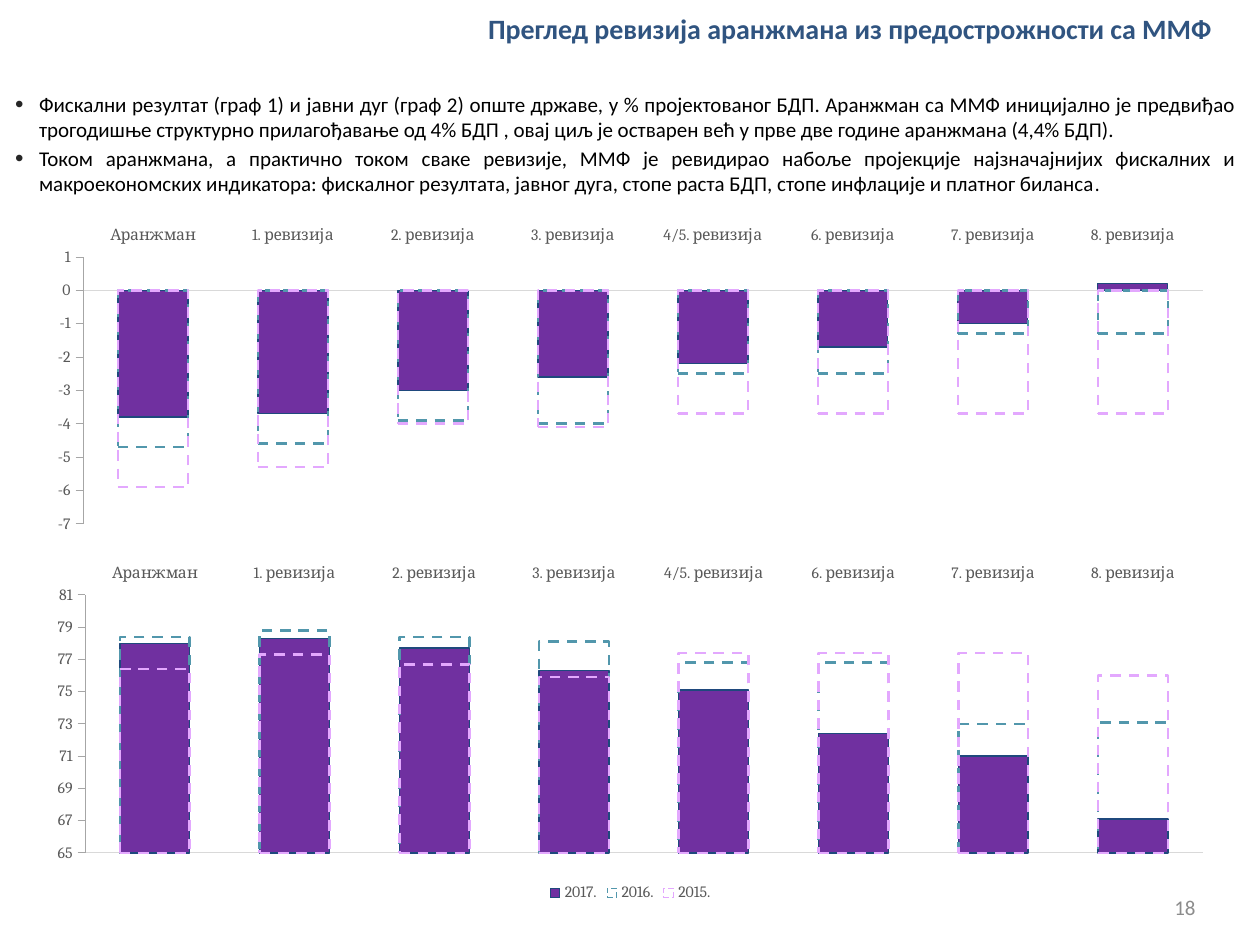
from dataclasses import dataclass

from lxml import etree
from pptx import Presentation
from pptx.chart.data import CategoryChartData
from pptx.dml.color import RGBColor
from pptx.enum.chart import XL_CHART_TYPE, XL_LEGEND_POSITION, XL_TICK_LABEL_POSITION, XL_TICK_MARK
from pptx.enum.dml import MSO_LINE
from pptx.enum.text import MSO_ANCHOR, PP_ALIGN
from pptx.oxml.ns import qn
from pptx.util import Emu, Pt

CLUSTERED = XL_CHART_TYPE.COLUMN_CLUSTERED
LEGEND_BOTTOM = XL_LEGEND_POSITION.BOTTOM
LABELS_HIGH = XL_TICK_LABEL_POSITION.HIGH
TICK_NONE, TICK_OUT = XL_TICK_MARK.NONE, XL_TICK_MARK.OUTSIDE
DASH = MSO_LINE.DASH
CENTER, RIGHT, JUSTIFY = PP_ALIGN.CENTER, PP_ALIGN.RIGHT, PP_ALIGN.JUSTIFY
TOP, MIDDLE = MSO_ANCHOR.TOP, MSO_ANCHOR.MIDDLE
EMU_PER_PX = 914400 / 126


@dataclass(frozen=True)
class Theme:
    body_font: str = "Calibri"
    chart_font: str = "Cambria"
    title_size: float = 16
    body_size: float = 12
    axis_size: float = 9
    title: str = "305480"
    body: str = "000000"
    bullet: str = "262626"
    page: str = "8C8C8C"
    axis_text: str = "595959"
    category_line: str = "D9D9D9"
    value_line: str = "A6A6A6"


@dataclass(frozen=True)
class Box:
    left: int
    top: int
    width: int
    height: int


@dataclass(frozen=True)
class SeriesStyle:
    fill: str | None
    line: str
    width: float


@dataclass(frozen=True)
class ReviewChart:
    frame: Box
    plot: Box
    low: int
    high: int
    step: int
    series: dict[str, tuple[float, ...]]
    legend: bool


THEME = Theme()
STYLES = (
    SeriesStyle("7030A0", "1F497D", 0.75),
    SeriesStyle(None, "5297AC", 1.5),
    SeriesStyle(None, "E3A8FE", 1.5),
)
REVIEWS = ("Аранжман", "1. ревизија", "2. ревизија", "3. ревизија",
           "4/5. ревизија", "6. ревизија", "7. ревизија", "8. ревизија")
FISCAL_RESULT = ReviewChart(
    Box(34, 221, 1193, 320), Box(83, 257, 1120, 267), -7, 1, 1,
    {
        "Series 1": (-3.8, -3.7, -3, -2.6, -2.2, -1.7, -1, 0.2),
        "Series 2": (-4.7, -4.6, -3.9, -4, -2.5, -2.5, -1.3, -1.3),
        "Series 3": (-5.9, -5.3, -4, -4.1, -3.7, -3.7, -3.7, -3.7),
    },
    False,
)
PUBLIC_DEBT = ReviewChart(
    Box(34, 557, 1193, 350), Box(85, 595, 1118, 258), 65, 81, 2,
    {
        "2017.": (78, 78.3, 77.7, 76.3, 75.1, 72.4, 71, 67.1),
        "2016.": (78.4, 78.8, 78.4, 78.1, 76.8, 76.8, 73, 73.1),
        "2015.": (76.4, 77.3, 76.7, 75.9, 77.4, 77.4, 77.4, 76),
    },
    True,
)
TITLE = "Преглед ревизија аранжмана из предострожности са ММФ"
POINTS = (
    "Фискални резултат (граф 1) и јавни дуг (граф 2) опште државе, у % пројектованог БДП. "
    "Аранжман са ММФ иницијално је предвиђао трогодишње структурно прилагођавање од 4% БДП , "
    "овај циљ је остварен већ у прве две године аранжмана (4,4% БДП).",
    "Током аранжмана, а практично током сваке ревизије, ММФ је ревидирао набоље пројекције "
    "најзначајнијих фискалних и макроекономских индикатора: фискалног резултата, јавног дуга, "
    "стопе раста БДП, стопе инфлације и платног биланса",
)


def px(length: int) -> Emu:
    return Emu(round(length * EMU_PER_PX))


def place(box: Box) -> tuple[Emu, Emu, Emu, Emu]:
    return px(box.left), px(box.top), px(box.width), px(box.height)


def style_font(font, name: str, size: float, color: str, bold: bool = False) -> None:
    font.name, font.size, font.bold = name, Pt(size), bold
    font.color.rgb = RGBColor.from_string(color)


def fill_line(frame, text: str, align, size: float, color: str, bold: bool = False) -> None:
    frame.word_wrap = True
    frame.vertical_anchor = MIDDLE
    frame.text = text
    paragraph = frame.paragraphs[0]
    paragraph.alignment = align
    style_font(paragraph.runs[0].font, THEME.body_font, size, color, bold)


def add_bullet(paragraph) -> None:
    properties = paragraph._p.get_or_add_pPr()
    properties.set("marL", str(px(29)))
    properties.set("indent", str(-px(24)))
    color = etree.SubElement(properties, qn("a:buClr"))
    etree.SubElement(color, qn("a:srgbClr"), val=THEME.bullet)
    etree.SubElement(properties, qn("a:buSzPct"), val="115000")
    etree.SubElement(properties, qn("a:buFont"), typeface="Arial")
    etree.SubElement(properties, qn("a:buChar"), char="•")


def add_points(slide, box: Box) -> None:
    frame = slide.shapes.add_textbox(*place(box)).text_frame
    frame.word_wrap = True
    frame.vertical_anchor = TOP
    frame.margin_left = 0
    frame.text = "\n".join(POINTS)
    for index, paragraph in enumerate(frame.paragraphs):
        add_bullet(paragraph)
        paragraph.alignment = JUSTIFY
        paragraph.space_before = Pt(2.4 if index else 0)
        style_font(paragraph.runs[0].font, THEME.body_font, THEME.body_size, THEME.body)
    full_stop = frame.paragraphs[-1].add_run()
    full_stop.text = "."
    style_font(full_stop.font, THEME.chart_font, THEME.body_size, THEME.body)


def set_plot_layout(chart, frame: Box, plot: Box) -> None:
    area = chart._chartSpace.chart.plotArea
    for old in area.findall(qn("c:layout")):
        area.remove(old)
    layout = etree.Element(qn("c:layout"))
    area.insert(0, layout)
    manual = etree.SubElement(layout, qn("c:manualLayout"))
    values = {
        "layoutTarget": "inner", "xMode": "edge", "yMode": "edge",
        "x": (plot.left - frame.left) / frame.width,
        "y": (plot.top - frame.top) / frame.height,
        "w": plot.width / frame.width,
        "h": plot.height / frame.height,
    }
    for tag, value in values.items():
        etree.SubElement(manual, qn(f"c:{tag}"), val=str(value))


def style_axis(axis, tick, color: str) -> None:
    axis.has_major_gridlines = False
    axis.major_tick_mark, axis.minor_tick_mark = tick, TICK_NONE
    axis.format.line.color.rgb = RGBColor.from_string(color)
    axis.format.line.width = Pt(0.5)
    style_font(axis.tick_labels.font, THEME.chart_font, THEME.axis_size, THEME.axis_text)


def add_review_chart(slide, review: ReviewChart) -> None:
    data = CategoryChartData()
    data.categories = REVIEWS
    for name, values in review.series.items():
        data.add_series(name, values)
    chart = slide.shapes.add_chart(CLUSTERED, *place(review.frame), data).chart
    style_font(chart.font, THEME.chart_font, 10, THEME.body)
    chart.has_title = False
    chart.has_legend = review.legend
    if review.legend:
        chart.legend.position = LEGEND_BOTTOM
        chart.legend.include_in_layout = False
        style_font(chart.legend.font, THEME.chart_font, THEME.axis_size, THEME.axis_text)
    style_axis(chart.category_axis, TICK_NONE, THEME.category_line)
    chart.category_axis.tick_label_position = LABELS_HIGH
    style_axis(chart.value_axis, TICK_OUT, THEME.value_line)
    chart.value_axis.minimum_scale = review.low
    chart.value_axis.maximum_scale = review.high
    chart.value_axis.major_unit = review.step
    bars = chart.plots[0]
    bars.gap_width = bars.overlap = 100
    bars.vary_by_categories = False
    for series, style in zip(bars.series, STYLES):
        series.invert_if_negative = False
        series.format.line.color.rgb = RGBColor.from_string(style.line)
        series.format.line.width = Pt(style.width)
        if style.fill:
            series.format.fill.solid()
            series.format.fill.fore_color.rgb = RGBColor.from_string(style.fill)
        else:
            series.format.fill.background()
            series.format.line.dash_style = DASH
    set_plot_layout(chart, review.frame, review.plot)


def main() -> None:
    deck = Presentation()
    deck.slide_width, deck.slide_height = px(1260), px(945)
    slide = deck.slides.add_slide(deck.slide_layouts[5])
    title = slide.shapes.title
    title.left, title.top, title.width, title.height = place(Box(451, 5, 798, 47))
    fill_line(title.text_frame, TITLE, CENTER, THEME.title_size, THEME.title, True)
    add_points(slide, Box(10, 85, 1239, 135))
    for review in (FISCAL_RESULT, PUBLIC_DEBT):
        add_review_chart(slide, review)
    page_number = slide.shapes.add_textbox(*place(Box(1155, 882, 53, 50)))
    fill_line(page_number.text_frame, "18", RIGHT, THEME.body_size, THEME.page)
    deck.save("out.pptx")


if __name__ == "__main__":
    main()
